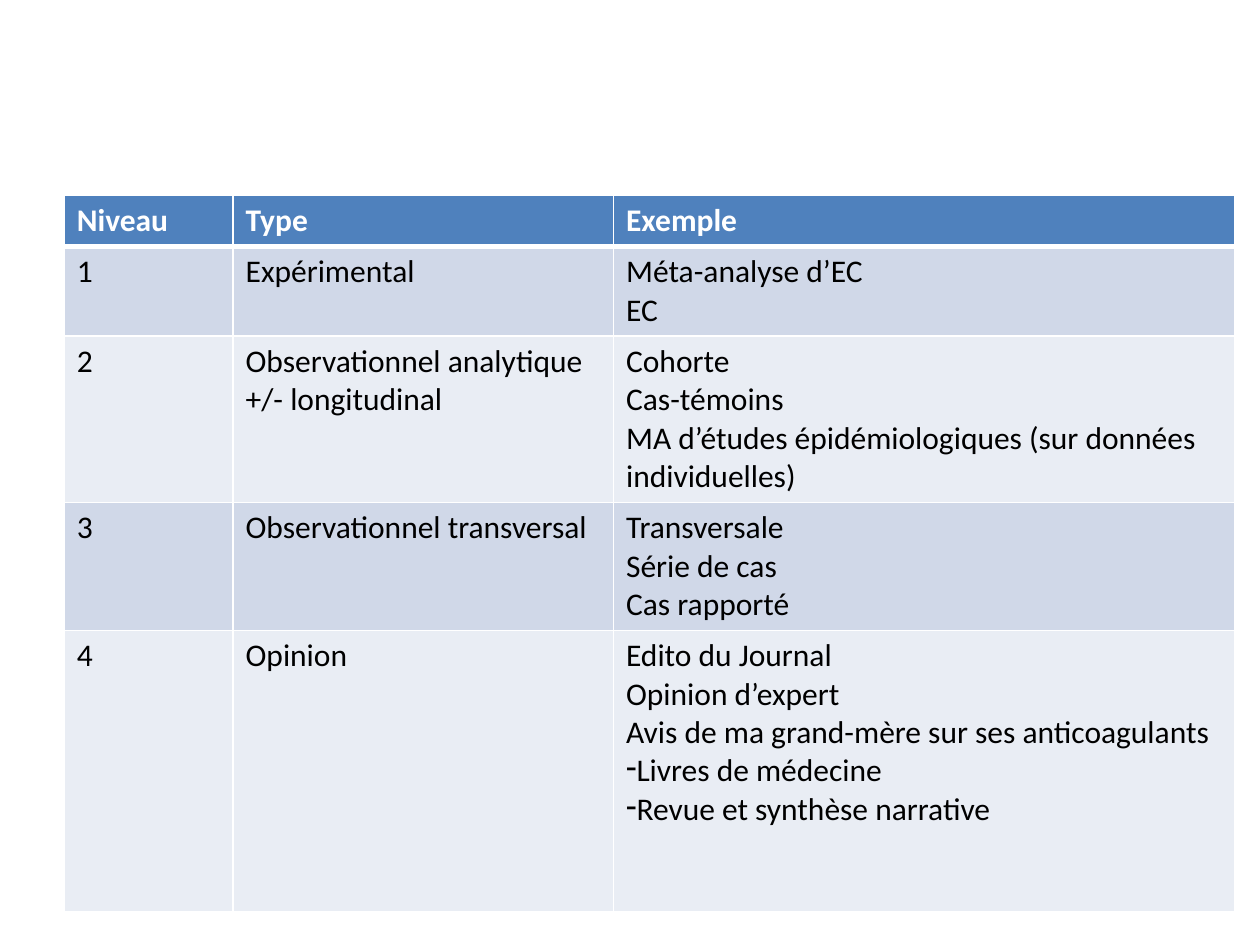
import dataclasses
import typing

import lxml.etree
import pptx
import pptx.dml.color
import pptx.oxml.ns
import pptx.util

Inches = pptx.util.Inches
Pt = pptx.util.Pt
Color = pptx.dml.color.RGBColor
qn = pptx.oxml.ns.qn


@dataclasses.dataclass(frozen=True)
class Theme:
    font: str = "Calibri"
    size: int = 18
    head: str = "4F81BD"
    bands: tuple[str, str] = ("D0D8E8", "E9EDF4")
    light: str = "FFFFFF"
    dark: str = "000000"
    thin: int = 1
    thick: int = 3


@dataclasses.dataclass(frozen=True)
class Level:
    high: float
    cells: tuple[str, str, str]
    dashes: tuple[str, ...] = ()


THEME = Theme()
WIDTHS = (1.34, 3.02, 4.93)
LEVELS = (
    Level(0.4, ("Niveau", "Type", "Exemple")),
    Level(0.7, ("1", "Expérimental", "Méta-analyse d’EC\nEC")),
    Level(
        1.32,
        (
            "2",
            "Observationnel analytique +/- longitudinal",
            "Cohorte\nCas-témoins\n"
            "MA d’études épidémiologiques (sur données individuelles)",
        ),
    ),
    Level(
        1.01,
        (
            "3",
            "Observationnel transversal",
            "Transversale\nSérie de cas\nCas rapporté",
        ),
    ),
    Level(
        2.23,
        (
            "4",
            "Opinion",
            "Edito du Journal\nOpinion d’expert\n"
            "Avis de ma grand-mère sur ses anticoagulants",
        ),
        ("Livres de médecine", "Revue et synthèse narrative"),
    ),
)


def edge(cell: typing.Any, top: int, base: int) -> None:
    props = cell._tc.get_or_add_tcPr()
    sides = {"lnL": THEME.thin, "lnR": THEME.thin, "lnT": top, "lnB": base}
    for spot, (side, width) in enumerate(sides.items()):
        line = lxml.etree.Element(qn(f"a:{side}"), w=str(Pt(width)))
        fill = lxml.etree.SubElement(line, qn("a:solidFill"))
        lxml.etree.SubElement(fill, qn("a:srgbClr"), val=THEME.light)
        props.insert(spot, line)


def dash(para: typing.Any) -> None:
    props = para._p.get_or_add_pPr()
    props.set("marL", "0")
    props.set("indent", "0")
    lxml.etree.SubElement(props, qn("a:buChar"), char="-")


def style(cell: typing.Any, row: int) -> None:
    head = row == 0
    cell.fill.solid()
    cell.fill.fore_color.rgb = Color.from_string(
        THEME.head if head else THEME.bands[(row - 1) % 2]
    )
    for para in cell.text_frame.paragraphs:
        para.font.name = THEME.font
        para.font.size = Pt(THEME.size)
        para.font.bold = head
        para.font.color.rgb = Color.from_string(
            THEME.light if head else THEME.dark
        )
    edge(
        cell,
        THEME.thick if row == 1 else THEME.thin,
        THEME.thick if head else THEME.thin,
    )


def draw(slide: typing.Any, levels: tuple[Level, ...]) -> None:
    table = slide.shapes.add_table(
        len(levels),
        len(WIDTHS),
        Inches(0.51),
        Inches(1.55),
        Inches(sum(WIDTHS)),
        Inches(sum(level.high for level in levels)),
    ).table
    for column, width in zip(table.columns, WIDTHS):
        column.width = Inches(width)
    for row, level in enumerate(levels):
        table.rows[row].height = Inches(level.high)
        for col, text in enumerate(level.cells):
            table.cell(row, col).text = text
        frame = table.cell(row, len(WIDTHS) - 1).text_frame
        for text in level.dashes:
            para = frame.add_paragraph()
            para.text = text
            dash(para)
        for cell in table.rows[row].cells:
            style(cell, row)


def main() -> None:
    deck = pptx.Presentation()
    deck.slide_width = Inches(10)
    deck.slide_height = Inches(7.5)
    draw(deck.slides.add_slide(deck.slide_layouts[6]), LEVELS)
    deck.save("out.pptx")


if __name__ == "__main__":
    main()
